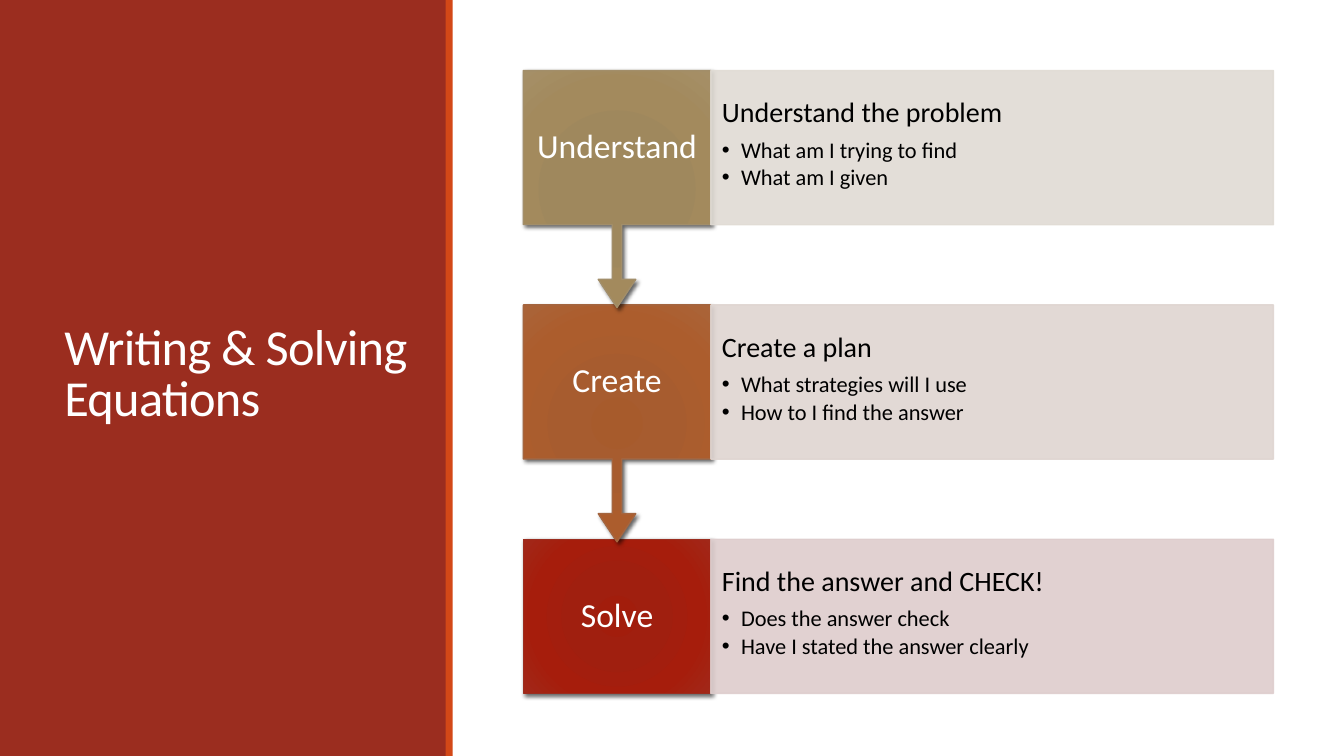
from lxml.etree import SubElement as Sub
from pptx import Presentation
from pptx.dml.color import RGBColor
from pptx.enum.shapes import MSO_SHAPE as Form
from pptx.enum.text import MSO_ANCHOR as Anchor, PP_ALIGN as Align
from pptx.oxml.ns import qn
from pptx.util import Inches, Pt

TOP, PITCH, TALL = 0.7, 4.65 / 2, 1.53
LEFT, WIDE = 5.19, 1.86
STEPS = [
    ("Understand", "Understand the problem",
     ["What am I trying to find", "What am I given"],
     ["9F875B", "9F885D", "A38A5D", "A58F67"], "A28E6A", "E0DBD4"),
    ("Create", "Create a plan",
     ["What strategies will I use", "How to I find the answer"],
     ["A75B2C", "A75C2F", "AC5D2D", "AA6439"], "A4653F", "DFD5D1"),
    ("Solve", "Find the answer and CHECK!",
     ["Does the answer check", "Have I stated the answer clearly"],
     ["A21D0C", "A01F0F", "A61D0C", "A12819"], "9B2D1F", "DECDCD"),
]


def tint(code):
    return RGBColor.from_string(code)


def tag(root, name, **attrs):
    return Sub(root, qn("a:" + name), {k: str(v) for k, v in attrs.items()})


def write(par, text, size=16, color="000000", align=Align.LEFT,
          lead=0.9, after=0, track=0, bullet=False):
    par.alignment, par.line_spacing, par.space_after = align, lead, Pt(after)
    run = par.add_run()
    run.text = text
    font = run.font
    font.name, font.size, font.color.rgb = "Calibri", Pt(size), tint(color)
    if track:
        run._r.get_or_add_rPr().set("spc", str(track))
    if bullet:
        props = par._p.get_or_add_pPr()
        props.set("marL", str(Inches(0.19)))
        props.set("indent", str(-Inches(0.19)))
        tag(props, "buFont", typeface="Arial")
        tag(props, "buChar", char="•")


class Deck:
    """Draws the parts of the slide in one style."""

    def __init__(self):
        self.show = Presentation()
        self.show.slide_width, self.show.slide_height = Inches(13.33), Inches(7.5)
        self.slide = self.show.slides.add_slide(self.show.slide_layouts[6])

    def frame(self, shape, side, edge, anchor):
        body = shape.text_frame
        body.word_wrap, body.vertical_anchor = True, anchor
        body.margin_left = body.margin_right = Inches(side)
        body.margin_top = body.margin_bottom = Inches(edge)
        return body

    def block(self, x, y, w, h, fill, line=None, form=Form.RECTANGLE):
        shape = self.slide.shapes.add_shape(form, *map(Inches, (x, y, w, h)))
        shape.shadow.inherit = False
        shape.fill.solid()
        shape.fill.fore_color.rgb = tint(fill)
        if line:
            shape.line.color.rgb, shape.line.width = tint(line), Pt(1)
        else:
            shape.line.fill.background()
        return shape

    def title(self, text):
        box = self.slide.shapes.add_textbox(*map(Inches, (0.54, 0.57, 3.87, 6.31)))
        body = self.frame(box, 0.1, 0.05, Anchor.MIDDLE)
        write(body.paragraphs[0], text, size=36, color="FFFFFF", lead=0.85, track=-50)

    def glow(self, shape, shades):
        props = shape._element.spPr
        flat = props.find(qn("a:solidFill"))
        grad = tag(props, "gradFill", rotWithShape=1)
        props.replace(flat, grad)
        stops = tag(grad, "gsLst")
        for pos, shade in zip((0, 34, 70, 100), shades):
            tag(tag(stops, "gs", pos=pos * 1000), "srgbClr", val=shade)
        way = tag(grad, "path", path="circle")
        tag(way, "fillToRect", l=100000, t=100000, r=100000, b=100000)
        cast = tag(props.find(qn("a:effectLst")), "outerShdw", blurRad=Pt(3),
                   dist=Pt(2), dir=2700000, algn="br", rotWithShape=0)
        tag(tag(cast, "srgbClr", val="000000"), "alpha", val=60000)

    def label(self, y, text, shades, line, arrow):
        form = Form.DOWN_ARROW_CALLOUT if arrow else Form.RECTANGLE
        tall = 2.35 if arrow else TALL
        shape = self.block(LEFT, y, WIDE, tall, shades[0], line, form)
        if arrow:
            for i, part in enumerate((0.05, 0.1, 0.15, 0.65)):
                shape.adjustments[i] = part
        self.glow(shape, shades)
        body = self.frame(shape, 0.13, 0.19, Anchor.MIDDLE)
        write(body.paragraphs[0], text, size=24, color="FFFFFF",
              align=Align.CENTER, after=8.4)

    def panel(self, y, head, notes, fill):
        shape = self.block(LEFT + WIDE, y, 5.58, TALL, fill, fill)
        for node in shape._element.spPr.iter(qn("a:srgbClr")):
            tag(node, "alpha", val=90000)
        body = self.frame(shape, 0.11, 0.28, Anchor.TOP)
        write(body.paragraphs[0], head, size=20, after=7)
        for note in notes:
            write(body.add_paragraph(), note, after=2.4, bullet=True)


def main():
    deck = Deck()
    deck.block(0, 0, 4.43, 7.5, "9B2D1F")
    deck.title("Writing & Solving Equations")
    deck.block(4.42, 0, 0.07, 7.5, "D34817")
    last = len(STEPS) - 1
    for i, step in reversed(list(enumerate(STEPS))):
        name, head, notes, shades, line, pale = step
        y = TOP + i * PITCH
        deck.label(y, name, shades, line, arrow=i < last)
        deck.panel(y, head, notes, pale)
    deck.show.save("out.pptx")


if __name__ == "__main__":
    main()
